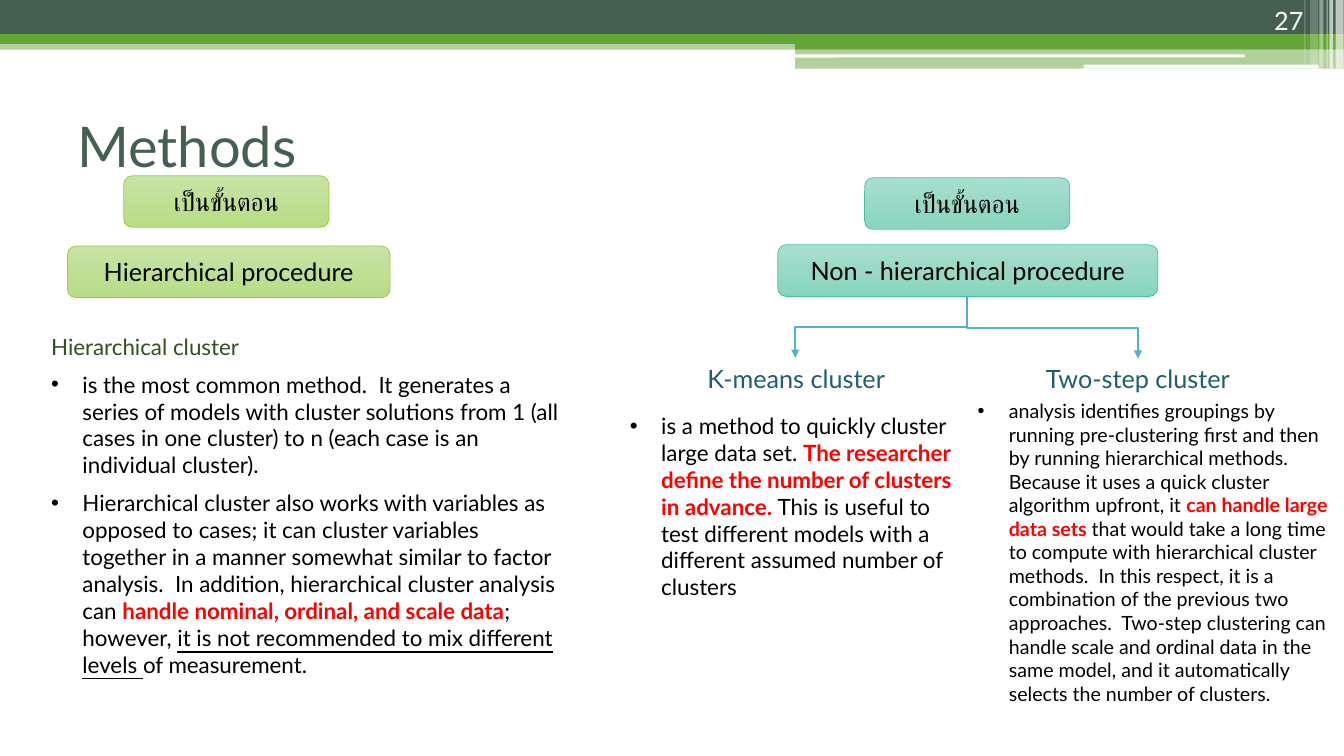
import pptx
import pptx.util
import pptx.dml.color
import pptx.enum.shapes
import pptx.enum.text
import pptx.oxml
import pptx.oxml.ns

Cm = pptx.util.Cm
Pt = pptx.util.Pt
RGBColor = pptx.dml.color.RGBColor
SHAPE = pptx.enum.shapes.MSO_SHAPE
ALIGN = pptx.enum.text.PP_ALIGN
ANCHOR = pptx.enum.text.MSO_ANCHOR
NS = pptx.oxml.ns.nsdecls("a")
qn = pptx.oxml.ns.qn

FONT = "Lato"
BLACK = RGBColor(0x00, 0x00, 0x00)
WHITE = RGBColor(0xFF, 0xFF, 0xFF)
RED = RGBColor(0xFF, 0x00, 0x00)
DARK = RGBColor(0x45, 0x5F, 0x51)
GREEN = RGBColor(0x63, 0xA5, 0x37)
FOREST = RGBColor(0x31, 0x52, 0x1C)
TEAL = RGBColor(0x1E, 0x5E, 0x70)
BLUE = RGBColor(0x4E, 0xB3, 0xCF)
LIME_BOX = (RGBColor(0xC8, 0xE3, 0xA5), RGBColor(0xB7, 0xDD, 0x84), RGBColor(0x99, 0xCB, 0x38))
MINT_BOX = (RGBColor(0xA8, 0xDE, 0xCD), RGBColor(0x88, 0xD5, 0xBE), RGBColor(0x44, 0xC1, 0xA3))

KEY = {"bold": True, "color": RED}
INDENT = Cm(0.79)

BARS = [
    (SHAPE.RECTANGLE, (0, 1.02, 33.87, 0.23), GREEN, 50),
    (SHAPE.RECTANGLE, (0, 0, 33.87, 0.86), DARK, 100),
    (SHAPE.RECTANGLE, (0, 0.86, 33.87, 0.25), GREEN, 100),
    (SHAPE.RECTANGLE, (20.04, 0.99, 13.83, 0.25), GREEN, 100),
    (SHAPE.RECTANGLE, (20.04, 1.22, 13.83, 0.51), GREEN, 50),
    (SHAPE.ROUNDED_RECTANGLE, (20.02, 1.37, 11.35, 0.08), WHITE, 100),
    (SHAPE.ROUNDED_RECTANGLE, (27.31, 1.63, 5.92, 0.1), WHITE, 100),
    (SHAPE.RECTANGLE, (33.66, 0, 0.2, 1.73), WHITE, 65),
    (SHAPE.RECTANGLE, (33.5, 0, 0.1, 1.73), WHITE, 65),
    (SHAPE.RECTANGLE, (33.43, 0, 0.03, 1.73), WHITE, 60),
    (SHAPE.RECTANGLE, (33.25, 0, 0.1, 1.73), WHITE, 40),
    (SHAPE.RECTANGLE, (33.02, 0, 0.2, 1.63), WHITE, 20),
    (SHAPE.RECTANGLE, (32.87, 0, 0.03, 1.63), WHITE, 30),
]

LABELS = [
    ("เป็นขั้นตอน", (3.12, 4.43, 5.17, 1.3), LIME_BOX),
    ("เป็นขั้นตอน", (21.79, 4.48, 5.17, 1.3), MINT_BOX),
    ("Hierarchical procedure", (1.7, 6.2, 8.13, 1.3), LIME_BOX),
    ("Non - hierarchical procedure", (19.6, 6.17, 9.58, 1.3), MINT_BOX),
]

HIERARCHICAL = [
    [("is the most common method.  It generates a series of models with cluster solutions "
      "from 1 (all cases in one cluster) to n (each case is an individual cluster).", {})],
    [("Hierarchical cluster also works with variables as opposed to cases; it can cluster "
      "variables together in a manner somewhat similar to factor analysis.  In addition, "
      "hierarchical cluster analysis can ", {}),
     ("handle nominal, ordinal, and scale data", KEY),
     ("; however, ", {}),
     ("it is not recommended to mix different levels ", {"underline": True}),
     ("of measurement.", {})],
]
K_MEANS = [
    ("is a method to quickly cluster large data set. ", {}),
    ("The researcher define the number of clusters in advance. ", KEY),
    ("This is useful to test different models with a different assumed number of clusters", {}),
]
TWO_STEP = [
    ("analysis identifies groupings by running pre-clustering first and then by running "
     "hierarchical methods.  Because it uses a quick cluster algorithm upfront, it ", {}),
    ("can handle large data sets ", KEY),
    ("that would take a long time to compute with hierarchical cluster methods.  In this "
     "respect, it is a combination of the previous two approaches.  Two-step clustering can "
     "handle scale and ordinal data in the same model, and it automatically selects the "
     "number of clusters.", {}),
]


def set_attrs(obj, values):
    for name, value in values.items():
        setattr(obj, name, value)


def place(sp, box):
    set_attrs(sp, dict(zip(("left", "top", "width", "height"), map(Cm, box))))


def set_bullet(p, bullet):
    pPr = p._p.get_or_add_pPr()
    pPr.set("marL", str(INDENT if bullet else 0))
    pPr.set("indent", str(-INDENT if bullet else 0))
    tag = '<a:buChar %s char="•"/>' if bullet else "<a:buNone %s/>"
    if bullet:
        pPr.append(pptx.oxml.parse_xml('<a:buFont %s typeface="Arial"/>' % NS))
    pPr.append(pptx.oxml.parse_xml(tag % NS))


def write(sp, paragraphs, size, color=BLACK, align=ALIGN.LEFT, anchor=ANCHOR.TOP, after=0):
    tf = sp.text_frame
    set_attrs(tf, {"word_wrap": True, "vertical_anchor": anchor,
                   "auto_size": pptx.enum.text.MSO_AUTO_SIZE.NONE})
    for i, (runs, bullet) in enumerate(paragraphs):
        p = tf.add_paragraph() if i else tf.paragraphs[0]
        set_attrs(p, {"alignment": align, "space_before": Pt(0), "space_after": Pt(after)})
        set_bullet(p, bullet)
        for text, extra in runs:
            fmt = {"name": FONT, "size": Pt(size), "bold": False, "color": color, **extra}
            r = p.add_run()
            r.text = text
            r.font.color.rgb = fmt.pop("color")
            set_attrs(r.font, fmt)


def line_of(text, **fmt):
    return [([(text, fmt)], False)]


def add_bar(s, shape, box, color, opacity):
    sp = s.shapes.add_shape(shape, *map(Cm, box))
    sp.shadow.inherit = False
    sp.fill.solid()
    sp.fill.fore_color.rgb = color
    sp.line.fill.background()
    if opacity < 100:
        clr = sp._element.spPr.find(".//" + qn("a:srgbClr"))
        clr.append(pptx.oxml.parse_xml('<a:alpha %s val="%d"/>' % (NS, opacity * 1000)))


def add_label(s, text, box, colors):
    sp = s.shapes.add_shape(SHAPE.ROUNDED_RECTANGLE, *map(Cm, box))
    sp.shadow.inherit = False
    sp.fill.gradient()
    sp.fill.gradient_angle = 270
    for stop, color in zip(sp.fill.gradient_stops, colors):
        stop.color.rgb = color
    sp.line.color.rgb = colors[2]
    sp.line.width = Pt(0.5)
    write(sp, line_of(text), 18, align=ALIGN.CENTER, anchor=ANCHOR.MIDDLE)


def add_branch(s, x1, y1, x2, y2):
    cx, cy = (x1 + x2) / 2, (y1 + y2) / 2
    side = 1 if x2 > x1 else -1
    dx, dy = side * (y2 - y1) / 2, abs(x2 - x1) / 2
    c = s.shapes.add_connector(pptx.enum.shapes.MSO_CONNECTOR.ELBOW,
                               Cm(cx + dx), Cm(cy - dy), Cm(cx - dx), Cm(cy + dy))
    c.line.color.rgb = BLUE
    c.line.width = Pt(1.5)
    spPr = c._element.spPr
    spPr.find(qn("a:xfrm")).set("rot", str((270 if side > 0 else 90) * 60000))
    spPr.find(qn("a:ln")).append(pptx.oxml.parse_xml('<a:tailEnd %s type="triangle"/>' % NS))
    spPr.append(pptx.oxml.parse_xml("<a:effectLst %s/>" % NS))


def add_text(s, box, paragraphs, size, **options):
    write(s.shapes.add_textbox(*map(Cm, box)), paragraphs, size, **options)


def fill_placeholder(s, idx, box, paragraphs, size, **options):
    sp = s.placeholders[idx]
    place(sp, box)
    write(sp, paragraphs, size, **options)


def main():
    prs = pptx.Presentation()
    prs.slide_width, prs.slide_height = Cm(33.87), Cm(19.05)
    s = prs.slides.add_slide(prs.slide_layouts.get_by_name("Comparison"))
    for bar in BARS:
        add_bar(s, *bar)
    fill_placeholder(s, 0, (1.7, 2.16, 30.48, 2.97), line_of("Methods"), 40,
                     color=DARK, anchor=ANCHOR.MIDDLE)
    add_text(s, (30.28, 0, 2.82, 1.02), line_of("27"), 18,
             color=WHITE, align=ALIGN.RIGHT, anchor=ANCHOR.BOTTOM)
    for label in LABELS:
        add_label(s, *label)
    add_branch(s, 24.38, 7.47, 20.04, 9.02)
    add_branch(s, 24.38, 7.47, 28.68, 9.04)
    add_text(s, (1.04, 8.26, 13.51, 9.73),
             line_of("Hierarchical cluster", color=FOREST) + [(runs, True) for runs in HIERARCHICAL],
             16, after=8)
    heading = {"color": TEAL, "align": ALIGN.CENTER}
    fill_placeholder(s, 1, (16.94, 9.02, 6.25, 1.02), line_of("K-means cluster"), 18, **heading)
    fill_placeholder(s, 2, (15.62, 10.26, 8.76, 5.74), [(K_MEANS, True)], 16)
    fill_placeholder(s, 3, (25.55, 9.04, 6.25, 1.02), line_of("Two-step cluster"), 18, **heading)
    fill_placeholder(s, 4, (24.38, 9.93, 9.37, 9.12), [(TWO_STEP, True)], 14)
    prs.save("out.pptx")


if __name__ == "__main__":
    main()
